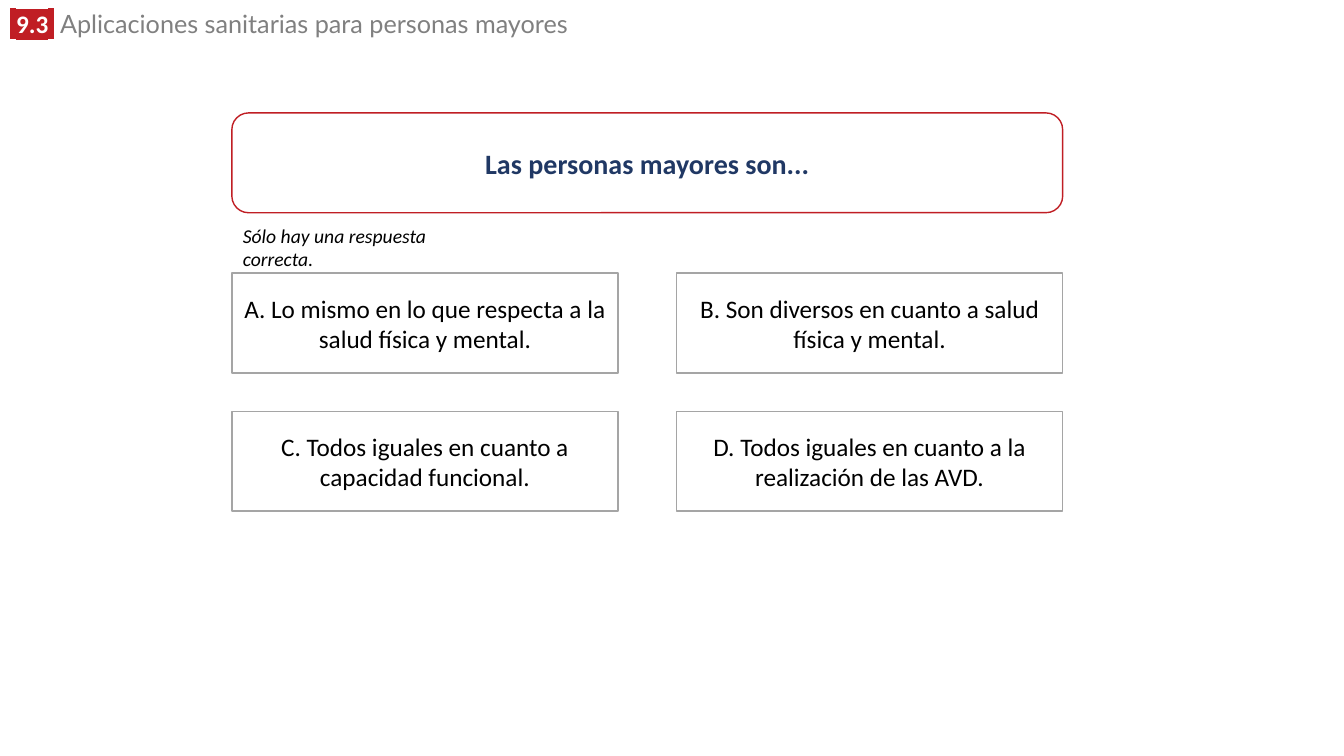
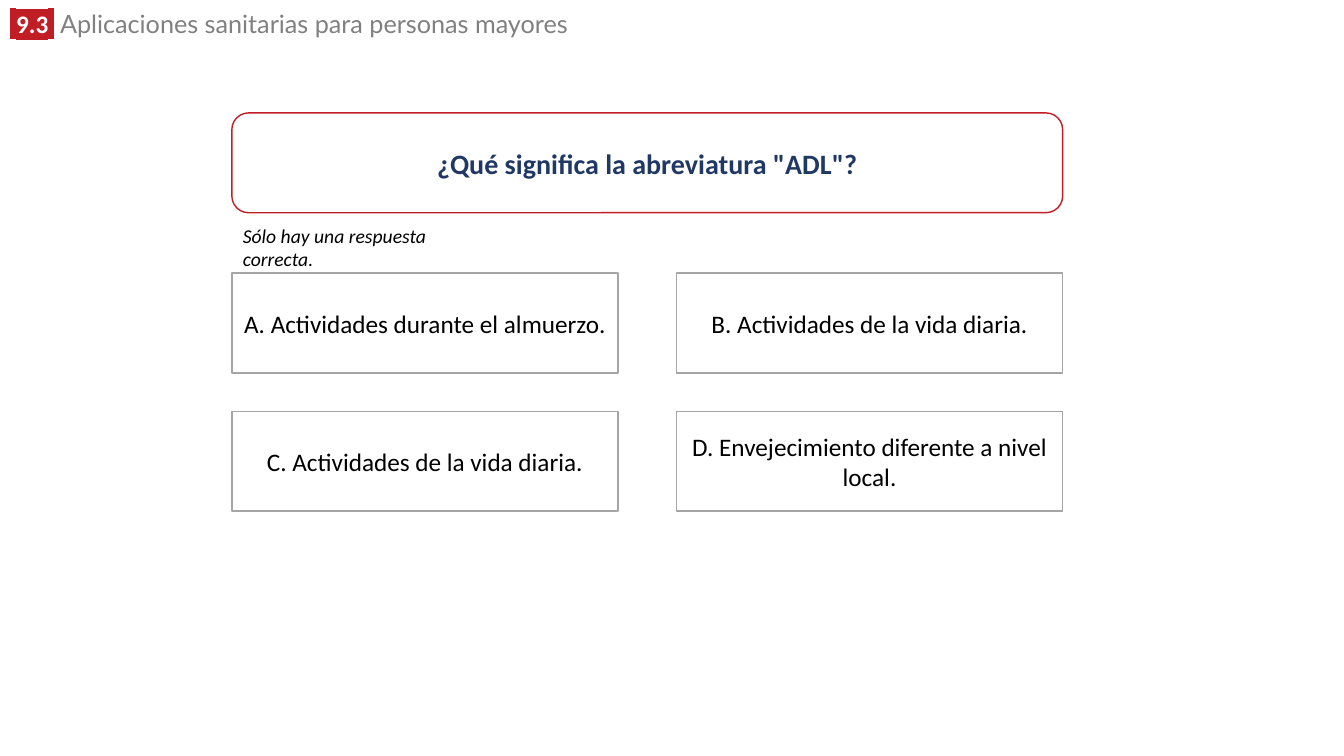
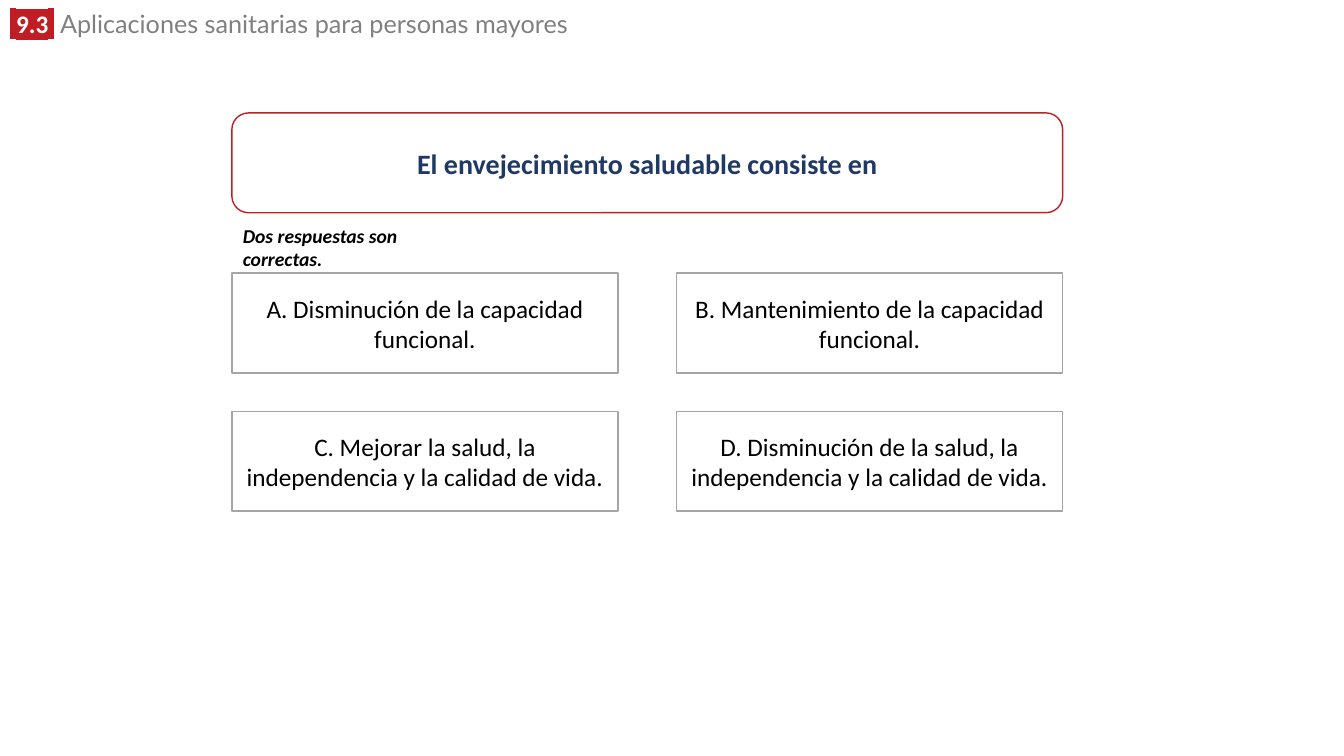
from lxml.etree import SubElement as Sub
from pptx import Presentation
from pptx.dml.color import RGBColor as Rgb
from pptx.enum.shapes import MSO_SHAPE as Geo
from pptx.enum.text import MSO_ANCHOR as Anchor, PP_ALIGN as Align
from pptx.oxml.ns import qn
from pptx.util import Inches, Pt

HEX = {"red": "C01E24", "navy": "203864", "gray": "808080",
       "edge": "A5A5A5", "black": "000000", "white": "FFFFFF"}

ONE = ("Sólo hay una respuesta correcta.", False)
TWO = ("Dos respuestas son correctas.", True)
QUIZ = [
    ("Las personas mayores son...", ONE, [
        "A. Lo mismo en lo que respecta a la salud física y mental.",
        "B. Son diversos en cuanto a salud física y mental.",
        "C. Todos iguales en cuanto a capacidad funcional.",
        "D. Todos iguales en cuanto a la realización de las AVD."]),
    ('¿Qué significa la abreviatura "ADL"?', ONE, [
        "A. Actividades durante el almuerzo.",
        "B. Actividades de la vida diaria.",
        "C. Actividades de la vida diaria.",
        "D. Envejecimiento diferente a nivel local."]),
    ("El envejecimiento saludable consiste en", TWO, [
        "A. Disminución de la capacidad funcional.",
        "B. Mantenimiento de la capacidad funcional.",
        "C. Mejorar la salud, la independencia y la calidad de vida.",
        "D. Disminución de la salud, la independencia y la calidad de vida."]),
]

TAG = {"name": "Lato", "size": Pt(18), "bold": True}
HEAD = [
    (" ", TAG, "white", "red"),
    ("9.3", TAG | {"name": "Calibri"}, "white", "red"),
    (" ", TAG, "white", "red"),
    (" Aplicaciones sanitarias para personas mayores",
     TAG | {"bold": False}, "gray", None),
]
ASK = {"name": "Calibri", "size": Pt(20), "bold": True}
PICK = {"name": "Calibri", "size": Pt(18), "bold": False}
NOTE = {"name": "Calibri", "size": Pt(14), "italic": True}

LEFT, TOP, WIDE, HIGH = 2.3, 1.12, 8.24, 0.99
CELL, ROW, STEP = 3.83, 2.71, 1.37


def write(para, text, form, ink, mark=None):
    run = para.add_run()
    run.text = text
    for key, val in form.items():
        setattr(run.font, key, val)
    run.font.color.rgb = Rgb.from_string(HEX[ink])
    if mark:
        high = Sub(run.font._element, qn("a:highlight"))
        Sub(high, qn("a:srgbClr")).set("val", HEX[mark])
        run.font._element.find(qn("a:solidFill")).addnext(high)


def label(slide, at):
    frame = slide.shapes.add_textbox(*map(Inches, at)).text_frame
    frame.word_wrap = True
    return frame.paragraphs[0]


def panel(slide, geo, at, edge, text, form, ink):
    box = slide.shapes.add_shape(geo, *map(Inches, at))
    box.shadow.inherit = False
    box.fill.solid()
    box.fill.fore_color.rgb = Rgb.from_string(HEX["white"])
    box.line.color.rgb = Rgb.from_string(HEX[edge])
    box.line.width = Pt(1)
    frame = box.text_frame
    frame.word_wrap = True
    frame.vertical_anchor = Anchor.MIDDLE
    para = frame.paragraphs[0]
    para.alignment = Align.CENTER
    write(para, text, form, ink)


def header(slide):
    para = label(slide, (0, 0.09, 9.52, 0.35))
    para.line_spacing = 0.8
    for part in HEAD:
        write(para, *part)


def build(slide, ask, note, picks):
    header(slide)
    panel(slide, Geo.ROUNDED_RECTANGLE, (LEFT, TOP, WIDE, HIGH),
          "red", ask, ASK, "navy")
    hint, bold = note
    write(label(slide, (2.31, 2.17, 2.36, 0.34)), hint,
          NOTE | {"bold": bold}, "black")
    for num, pick in enumerate(picks):
        row, col = divmod(num, 2)
        at = (LEFT + col * (WIDE - CELL), ROW + row * STEP, CELL, HIGH)
        panel(slide, Geo.RECTANGLE, at, "edge", pick, PICK, "black")


def main():
    deck = Presentation()
    deck.slide_width, deck.slide_height = Inches(13.33), Inches(7.5)
    for item in QUIZ:
        build(deck.slides.add_slide(deck.slide_layouts[6]), *item)
    deck.save("out.pptx")


if __name__ == "__main__":
    main()
